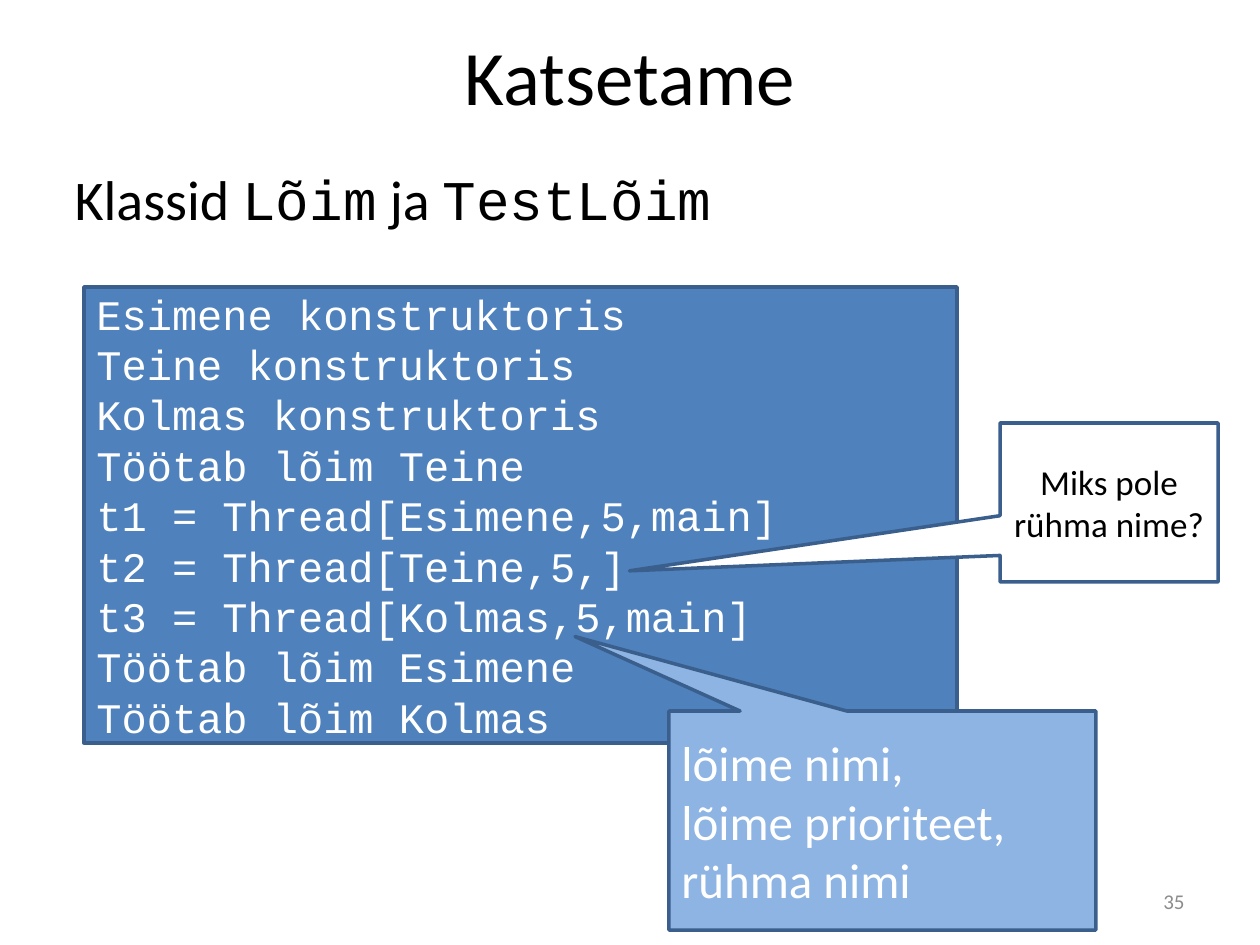
from dataclasses import dataclass

from lxml import etree
from pptx import Presentation
from pptx.dml.color import RGBColor
from pptx.enum.shapes import MSO_SHAPE
from pptx.enum.text import MSO_ANCHOR, MSO_AUTO_SIZE, PP_ALIGN
from pptx.oxml.ns import qn
from pptx.util import Emu, Pt

RECTANGLE = MSO_SHAPE.RECTANGLE
CALLOUT = MSO_SHAPE.RECTANGULAR_CALLOUT
LEFT, CENTER, RIGHT = PP_ALIGN.LEFT, PP_ALIGN.CENTER, PP_ALIGN.RIGHT
TOP, MIDDLE = MSO_ANCHOR.TOP, MSO_ANCHOR.MIDDLE
NO_AUTOFIT = MSO_AUTO_SIZE.NONE

EMU_PER_PX = 914400 / 126
SANS, MONO = "Calibri", "Courier New"
BLACK, WHITE, GRAY = "000000", "FFFFFF", "8C8C8C"
BLUE, LIGHT_BLUE, OUTLINE = "4F81BD", "8EB4E3", "3A5F8C"


@dataclass(frozen=True)
class Box:
    left: int
    top: int
    width: int
    height: int


@dataclass(frozen=True)
class Panel:
    box: Box
    lines: tuple[str, ...]
    fill: str
    size: int
    font: str = SANS
    color: str = WHITE
    align: PP_ALIGN = LEFT
    pointer: tuple[float, float] | None = None


PANELS = (
    Panel(
        Box(84, 287, 873, 456),
        (
            "Esimene konstruktoris",
            "Teine konstruktoris",
            "Kolmas konstruktoris",
            "Töötab lõim Teine",
            "t1 = Thread[Esimene,5,main]",
            "t2 = Thread[Teine,5,]",
            "t3 = Thread[Kolmas,5,main]",
            "Töötab lõim Esimene",
            "Töötab lõim Kolmas",
        ),
        BLUE, 24, font=MONO,
    ),
    Panel(
        Box(669, 711, 427, 219),
        ("lõime nimi,", "lõime prioriteet,", "rühma nimi"),
        LIGHT_BLUE, 28, pointer=(-0.72, -0.84),
    ),
    Panel(
        Box(1000, 423, 218, 159),
        ("Miks pole rühma nime?",),
        WHITE, 20, color=BLACK, align=CENTER, pointer=(-2.2, 0.43),
    ),
)


def px(length: int) -> Emu:
    return Emu(round(length * EMU_PER_PX))


def rgb(color: str) -> RGBColor:
    return RGBColor.from_string(color)


def bounds(box: Box) -> tuple[Emu, Emu, Emu, Emu]:
    return px(box.left), px(box.top), px(box.width), px(box.height)


def move(shape, box: Box) -> None:
    shape.left, shape.top, shape.width, shape.height = bounds(box)


def write(shape, lines, *, size: int, font: str = SANS, color: str = BLACK,
          align: PP_ALIGN = LEFT, anchor: MSO_ANCHOR = MIDDLE) -> None:
    frame = shape.text_frame
    frame.word_wrap = True
    frame.auto_size = NO_AUTOFIT
    frame.vertical_anchor = anchor
    for index, line in enumerate(lines):
        paragraph = frame.add_paragraph() if index else frame.paragraphs[0]
        paragraph.alignment = align
        pieces = ((line, font),) if isinstance(line, str) else line
        for text, face in pieces:
            run = paragraph.add_run()
            run.text = text
            run.font.size = Pt(size)
            run.font.name = face
            run.font.color.rgb = rgb(color)


def remove_bullet(paragraph) -> None:
    properties = paragraph._p.get_or_add_pPr()
    properties.set("marL", "0")
    properties.set("indent", "0")
    etree.SubElement(properties, qn("a:buNone"))


def draw_panel(slide, panel: Panel) -> None:
    kind = CALLOUT if panel.pointer else RECTANGLE
    shape = slide.shapes.add_shape(kind, *bounds(panel.box))
    shape.shadow.inherit = False
    shape.fill.solid()
    shape.fill.fore_color.rgb = rgb(panel.fill)
    shape.line.color.rgb = rgb(OUTLINE)
    shape.line.width = Pt(2)
    for index, offset in enumerate(panel.pointer or ()):
        shape.adjustments[index] = offset
    write(shape, panel.lines, size=panel.size, font=panel.font,
          color=panel.color, align=panel.align)


def main() -> None:
    presentation = Presentation()
    presentation.slide_width, presentation.slide_height = px(1260), px(945)
    slide = presentation.slides.add_slide(presentation.slide_layouts[1])

    title = slide.shapes.title
    move(title, Box(63, 19, 1134, 112))
    write(title, ("Katsetame",), size=44, align=CENTER)

    classes = slide.placeholders[1]
    move(classes, Box(62, 158, 1134, 624))
    class_names = (("Klassid ", SANS), ("Lõim", MONO), (" ja ", SANS), ("TestLõim", MONO))
    write(classes, (class_names,), size=32, anchor=TOP)
    remove_bullet(classes.text_frame.paragraphs[0])

    page_number = slide.shapes.add_textbox(*bounds(Box(903, 876, 294, 50)))
    write(page_number, ("35",), size=12, color=GRAY, align=RIGHT)

    for panel in PANELS:
        draw_panel(slide, panel)

    presentation.save("out.pptx")


if __name__ == "__main__":
    main()
